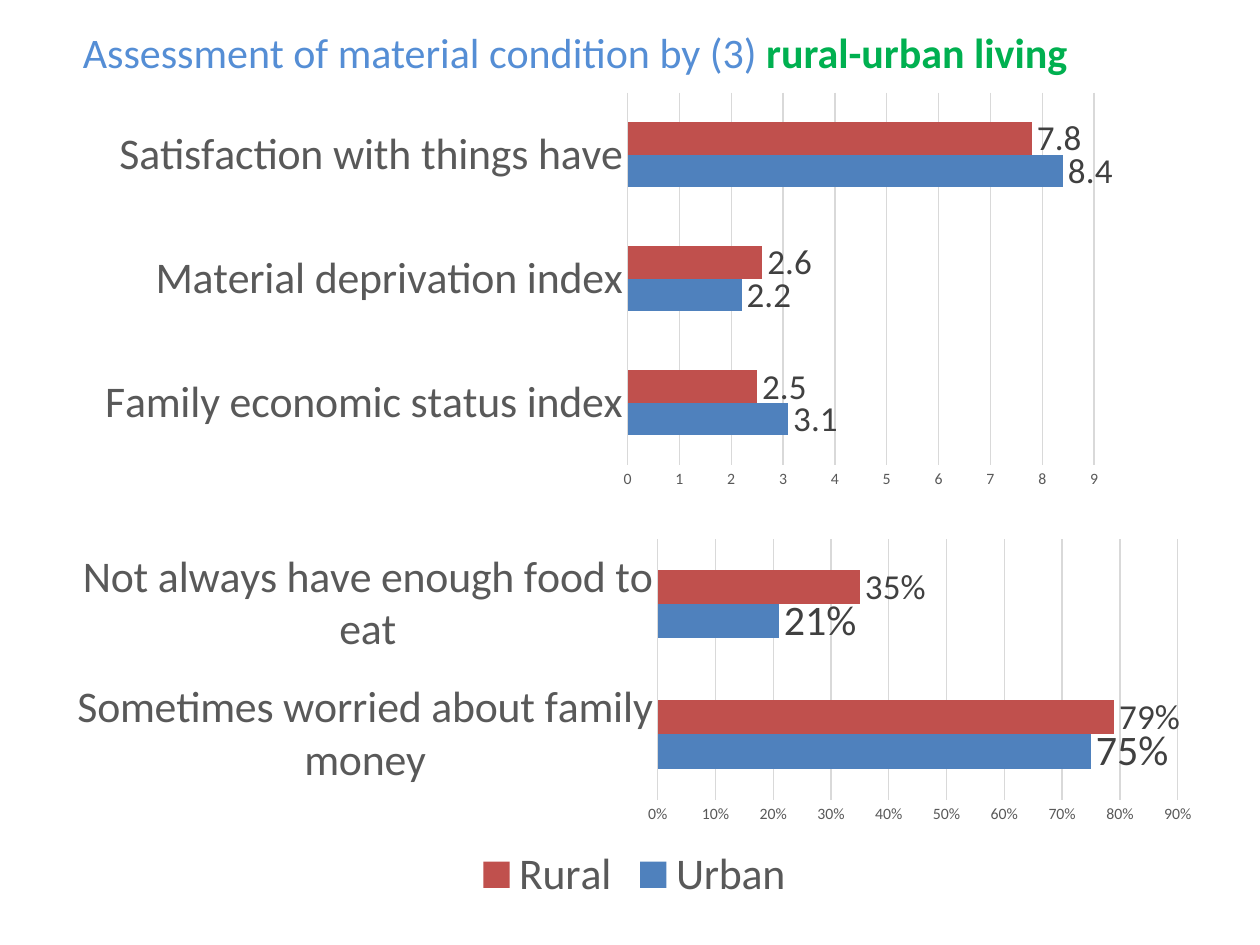
from pptx import Presentation
from pptx import util as u
from pptx.chart import data as chart_data
from pptx.dml.color import RGBColor
from pptx.enum import chart as chart_enum, text

COLORS = {
    "title": "558ED5", "accent": "00B050", "Urban": "4F81BD", "Rural": "C0504D",
    "axis": "595959", "label": "404040", "grid": "D9D9D9",
}
CHARTS = [
    {
        "box": (0.67, 0.67, 8.21, 3.27),
        "categories": ["Family economic status index", "Material deprivation index",
                       "Satisfaction with things have"],
        "values": {"Urban": (3.1, 2.2, 8.4), "Rural": (2.5, 2.6, 7.8)},
        "label_sizes": (20, 20), "format": "General", "step": 1, "legend": False,
    },
    {
        "box": (0.43, 4.22, 9.21, 3),
        "categories": ["Sometimes worried about family money",
                       "Not always have enough food to eat"],
        "values": {"Urban": (0.75, 0.21), "Rural": (0.79, 0.35)},
        "label_sizes": (24, 20), "format": "0%", "step": 0.1, "legend": True,
    },
]


def style_font(font, size, color, bold=False):
    font.name = "Calibri"
    font.size = u.Pt(size)
    font.bold = bold
    font.color.rgb = RGBColor.from_string(COLORS[color])


def style_line(line):
    line.width = u.Pt(0.75)
    line.color.rgb = RGBColor.from_string(COLORS["grid"])


deck = Presentation()
deck.slide_width, deck.slide_height = u.Inches(10), u.Inches(7.5)
page = deck.slides.add_slide(deck.slide_layouts[5])

title = page.shapes.title
title.left, title.top = u.Inches(-0.03), u.Inches(0.13)
title.width, title.height = u.Inches(9.19), u.Inches(0.53)
title.text_frame.vertical_anchor = text.MSO_ANCHOR.BOTTOM
para = title.text_frame.paragraphs[0]
para.alignment = text.PP_ALIGN.CENTER
for words, color, bold in [
    ("Assessment of material condition by (3) ", "title", False),
    ("rural-urban living", "accent", True),
]:
    span = para.add_run()
    span.text = words
    style_font(span.font, 24, color, bold)

for item in CHARTS:
    data = chart_data.CategoryChartData(number_format=item["format"])
    data.categories = item["categories"]
    for name, values in item["values"].items():
        data.add_series(name, values)
    chart = page.shapes.add_chart(
        chart_enum.XL_CHART_TYPE.BAR_CLUSTERED, *map(u.Inches, item["box"]), data
    ).chart
    chart.has_title = False
    chart.font.name = "Calibri"
    chart.font.size = u.Pt(10)

    chart.has_legend = item["legend"]
    if chart.has_legend:
        chart.legend.position = chart_enum.XL_LEGEND_POSITION.BOTTOM
        chart.legend.include_in_layout = False
        style_font(chart.legend.font, 25, "axis")

    for axis, size in [(chart.category_axis, 25), (chart.value_axis, 9)]:
        axis.major_tick_mark = chart_enum.XL_TICK_MARK.NONE
        axis.minor_tick_mark = chart_enum.XL_TICK_MARK.NONE
        style_font(axis.tick_labels.font, size, "axis")
    style_line(chart.category_axis.format.line)
    value_axis = chart.value_axis
    value_axis.format.line.fill.background()
    value_axis.has_major_gridlines = True
    style_line(value_axis.major_gridlines.format.line)
    value_axis.minimum_scale = 0
    value_axis.maximum_scale = 9 * item["step"]
    value_axis.major_unit = item["step"]
    value_axis.tick_labels.number_format = item["format"]
    value_axis.tick_labels.number_format_is_linked = False

    plot = chart.plots[0]
    plot.gap_width = 182
    plot.vary_by_categories = False
    for series, size in zip(plot.series, item["label_sizes"]):
        series.format.fill.solid()
        series.format.fill.fore_color.rgb = RGBColor.from_string(COLORS[series.name])
        labels = series.data_labels
        labels.show_value = True
        labels.position = chart_enum.XL_LABEL_POSITION.OUTSIDE_END
        labels.number_format = item["format"]
        labels.number_format_is_linked = False
        style_font(labels.font, size, "label")

deck.save("out.pptx")
